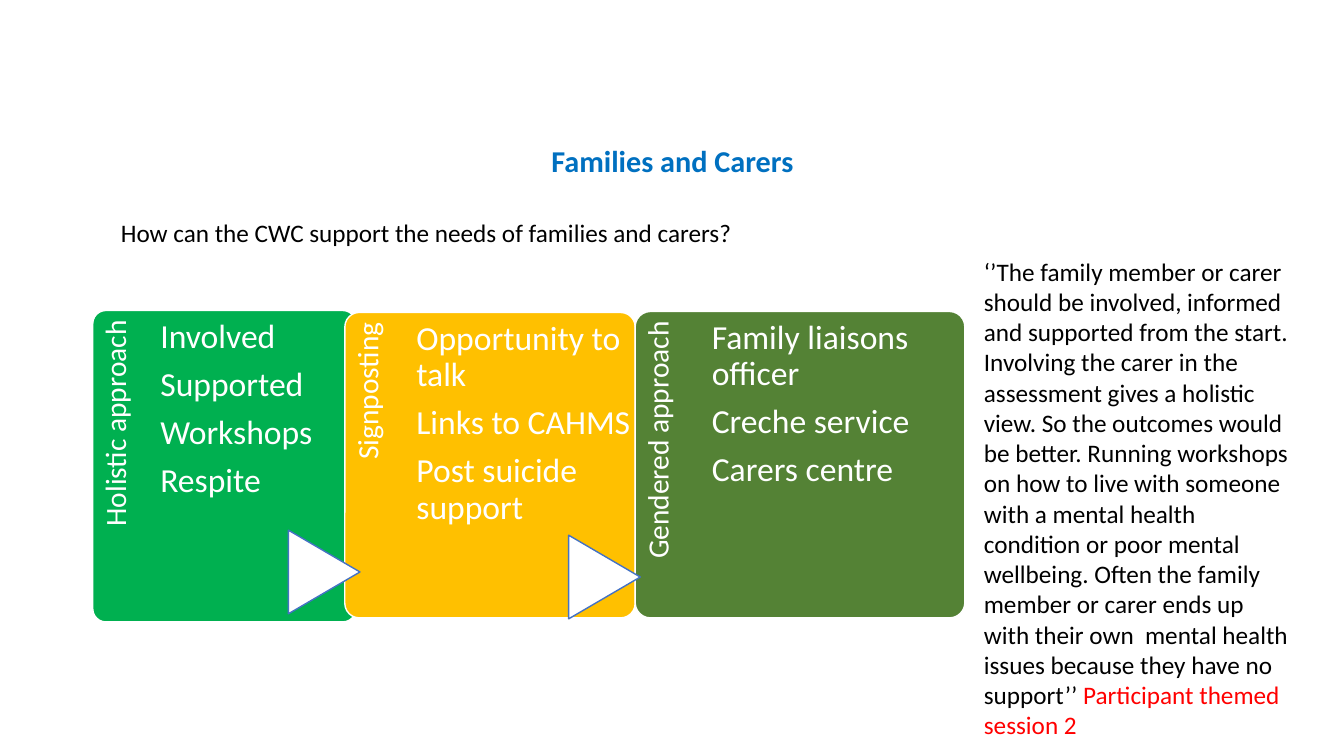
from dataclasses import dataclass

from pptx import Presentation
from pptx import util as u
from pptx.dml.color import RGBColor
from pptx.enum import shapes, text


@dataclass(frozen=True)
class Theme:
    font: str = "Calibri"
    blue: str = "0070C0"
    edge: str = "4472C4"
    black: str = "000000"
    white: str = "FFFFFF"
    red: str = "FF0000"
    green: str = "00B050"
    amber: str = "FFC000"
    olive: str = "548235"
    title: float = 21.6
    body: float = 18
    label: float = 21
    item: float = 24


class Deck:
    def __init__(self, theme):
        self.theme = theme
        self.prs = Presentation()
        self.prs.slide_width = u.Inches(13.33)
        self.prs.slide_height = u.Inches(7.5)
        self.slide = self.prs.slides.add_slide(self.prs.slide_layouts[5])

    def run(self, para, words, size, color, bold=False):
        run = para.add_run()
        run.text = words
        font = run.font
        font.name = self.theme.font
        font.size = u.Pt(size)
        font.bold = bold
        font.color.rgb = RGBColor.from_string(color)

    def title(self, words, *box):
        shape = self.slide.shapes.title
        shape.left, shape.top, shape.width, shape.height = map(u.Inches, box)
        frame = shape.text_frame
        frame.auto_size = text.MSO_AUTO_SIZE.NONE
        frame.vertical_anchor = text.MSO_ANCHOR.BOTTOM
        frame.margin_bottom = u.Inches(0.07)
        para = frame.paragraphs[0]
        para.alignment = text.PP_ALIGN.CENTER
        para.line_spacing = 0.9
        self.run(para, words, self.theme.title, self.theme.blue, True)

    def box(self, *box):
        shape = self.slide.shapes.add_textbox(*map(u.Inches, box))
        shape.text_frame.word_wrap = True
        return shape

    def prose(self, runs, *box):
        """Add one paragraph of (words, color) runs."""
        para = self.box(*box).text_frame.paragraphs[0]
        for words, color in runs:
            self.run(para, words, self.theme.body, color)

    def shape(self, kind, fill, line, *box):
        shape = self.slide.shapes.add_shape(kind, *map(u.Inches, box))
        shape.shadow.inherit = False
        shape.fill.solid()
        shape.fill.fore_color.rgb = RGBColor.from_string(fill)
        shape.line.color.rgb = RGBColor.from_string(line)
        shape.line.width = u.Pt(1)
        return shape

    def lines(self, shape, lines, size, align, insets):
        frame = shape.text_frame
        (frame.margin_left, frame.margin_top,
         frame.margin_right, frame.margin_bottom) = map(u.Inches, insets)
        for i, words in enumerate(lines):
            para = frame.add_paragraph() if i else frame.paragraphs[0]
            para.alignment = align
            para.line_spacing = 0.9
            para.space_after = u.Pt(0.35 * size)
            self.run(para, words, size, self.theme.white)

    def panel(self, label, items, fill, indent, left, top, width, height):
        """Add a card with a label up its left edge and a list beside it."""
        card = self.shape(shapes.MSO_SHAPE.ROUNDED_RECTANGLE, fill,
                          self.theme.white, left, top, width, height)
        card.adjustments[0] = 0.05
        thick, length = 0.2 * width, 0.82 * height
        shift = (length - thick) / 2
        side = self.box(left - shift, top + shift, length, thick)
        side.rotation = 270
        self.lines(side, [label], self.theme.label, text.PP_ALIGN.RIGHT,
                   (0, 0.08, 0.1, 0))
        body = self.box(left + indent, top, 0.745 * width, height)
        self.lines(body, items, self.theme.item, text.PP_ALIGN.LEFT,
                   (0, 0.09, 0, 0))

    def arrow(self, left, top):
        shape = self.shape(shapes.MSO_SHAPE.FLOWCHART_EXTRACT,
                           self.theme.white, self.theme.edge,
                           left, top, 0.83, 0.71)
        shape.rotation = 90

    def save(self):
        self.prs.save("out.pptx")


def main():
    theme = Theme()
    deck = Deck(theme)
    deck.title("Families and Carers", 0.92, 0.4, 11.5, 1.45)
    deck.prose([("How can the CWC support the needs of families and carers?",
                 theme.black)], 1.1, 2.11, 9.31, 0.71)

    panels = [
        ("Holistic approach",
         ["Involved", "Supported", "Workshops", "Respite"],
         theme.green, 0.67, 0.92, 3.08, 2.61, 3.09),
        ("Signposting",
         ["Opportunity to talk", "Links to CAHMS", "Post suicide support"],
         theme.amber, 0.71, 3.42, 3.1, 2.88, 3.03),
        ("Gendered approach",
         ["Family liaisons officer", "Creche service", "Carers centre"],
         theme.olive, 0.76, 6.3, 3.09, 3.27, 3.04),
    ]
    for panel in panels:
        deck.panel(*panel)
    for spot in [(2.8, 5.32), (5.58, 5.37)]:
        deck.arrow(*spot)

    quote = (
        "‘’The family member or carer should be involved, informed and "
        "supported from the start. Involving the carer in the assessment "
        "gives a holistic view. So the outcomes would be better. Running "
        "workshops on how to live with someone with a mental health "
        "condition or poor mental wellbeing. Often the family member or "
        "carer ends up with their own  mental health issues because they "
        "have no support’’ ")
    deck.prose([(quote, theme.black),
                ("Participant themed session 2", theme.red)],
               9.66, 2.49, 3.28, 4.95)
    deck.save()


if __name__ == "__main__":
    main()
